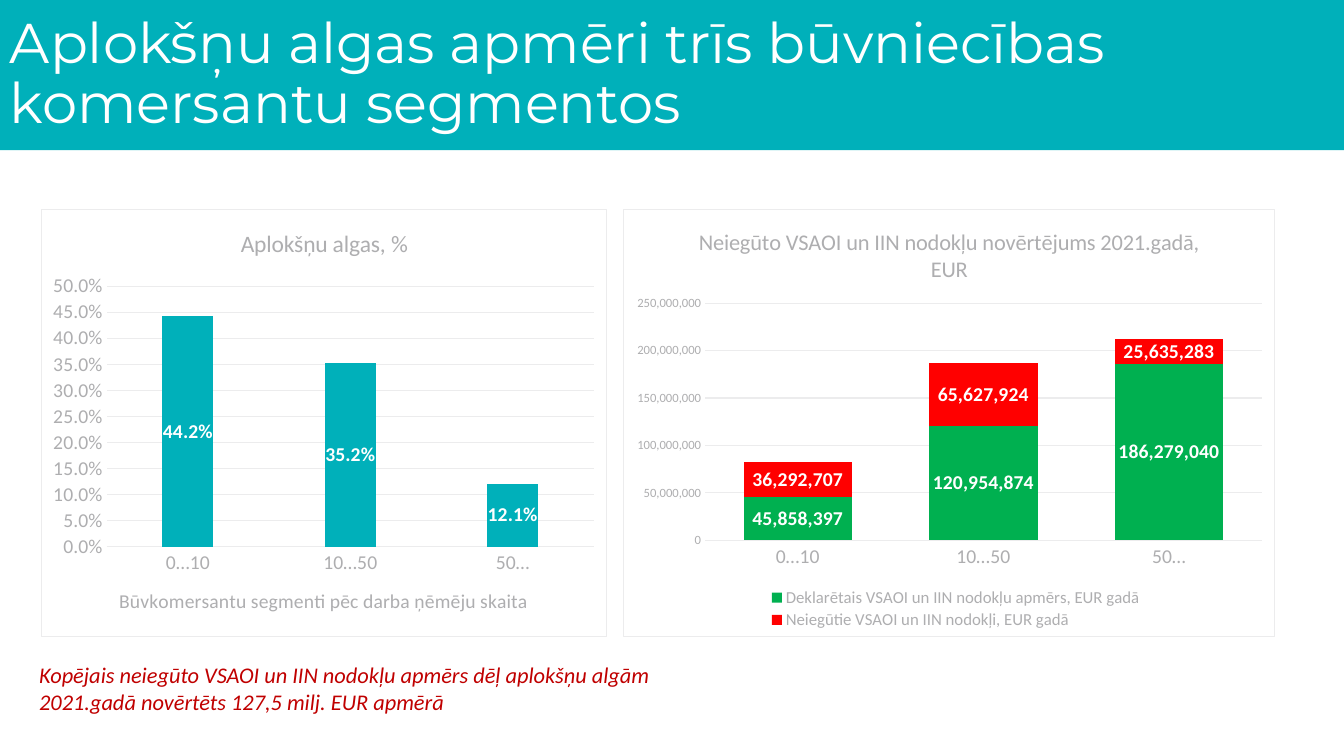
from lxml import etree
from pptx import Presentation
from pptx.chart.data import CategoryChartData
from pptx.dml.color import RGBColor
from pptx.enum.chart import XL_CHART_TYPE, XL_LABEL_POSITION, XL_LEGEND_POSITION, XL_TICK_MARK
from pptx.enum.shapes import MSO_SHAPE
from pptx.enum.text import MSO_ANCHOR
from pptx.oxml import parse_xml
from pptx.oxml.ns import nsdecls, qn
from pptx.util import Inches, Pt

CLUSTERED = XL_CHART_TYPE.COLUMN_CLUSTERED
STACKED = XL_CHART_TYPE.COLUMN_STACKED
CENTER = XL_LABEL_POSITION.CENTER
BOTTOM = XL_LEGEND_POSITION.BOTTOM
NO_TICK = XL_TICK_MARK.NONE
RECTANGLE = MSO_SHAPE.RECTANGLE
TOP, MIDDLE = MSO_ANCHOR.TOP, MSO_ANCHOR.MIDDLE

COLORS = {"teal": "00B0BA", "white": "FFFFFF", "gray": "AEAEB0", "grid": "ECECED",
          "green": "00B050", "red": "FF0000", "dark red": "C00000"}
SEGMENTS = ["0…10", "10…50", "50…"]


def color(name):
    return RGBColor.from_string(COLORS[name])


def format_font(font, size, tint="gray", name="Calibri", bold=False, italic=False):
    font.size, font.name, font.bold, font.italic = Pt(size), name, bold, italic
    font.color.rgb = color(tint)


def write(frame, text, **style):
    para = frame.paragraphs[0]
    span = para.add_run()
    span.text = text
    format_font(span.font, **style)
    return para


def make_layout(x, y, width, height, inner=False):
    target = '<c:layoutTarget val="inner"/>' if inner else ""
    return parse_xml(
        f'<c:layout {nsdecls("c")}><c:manualLayout>{target}'
        '<c:xMode val="edge"/><c:yMode val="edge"/>'
        f'<c:x val="{x}"/><c:y val="{y}"/><c:w val="{width}"/><c:h val="{height}"/>'
        '</c:manualLayout></c:layout>')


class SlideBuilder:
    """Holds the deck and draws styled elements on its current page."""

    def __init__(self, deck):
        self.page = deck.slides.add_slide(deck.slide_layouts[6])

    def band(self, left, top, width, height, fill):
        band = self.page.shapes.add_shape(
            RECTANGLE, Inches(left), Inches(top), Inches(width), Inches(height))
        band.shadow.inherit = False
        band.fill.solid()
        band.fill.fore_color.rgb = color(fill)
        band.line.fill.background()

    def text(self, left, top, width, height, text, anchor=TOP, spacing=1.0, **style):
        box = self.page.shapes.add_textbox(
            Inches(left), Inches(top), Inches(width), Inches(height))
        box.text_frame.word_wrap = True
        box.text_frame.vertical_anchor = anchor
        write(box.text_frame, text, **style).line_spacing = spacing

    def chart(self, left, top, width, height, kind, title, title_size, series, maximum, step,
              number_format, value_size, gap, overlap, plot_layout,
              axis_title=None, legend_layout=None):
        data = CategoryChartData()
        data.categories = SEGMENTS
        for name, values, _ in series:
            data.add_series(name, values)
        chart = self.page.shapes.add_chart(
            kind, Inches(left), Inches(top), Inches(width), Inches(height), data).chart
        format_font(chart.font, 14)
        write(chart.chart_title.text_frame, title, size=title_size)

        plot = chart.plots[0]
        plot.vary_by_categories = False
        plot.gap_width, plot.overlap = gap, overlap
        for bars, (_, _, fill) in zip(plot.series, series):
            bars.format.fill.solid()
            bars.format.fill.fore_color.rgb = color(fill)
            labels = bars.data_labels
            labels.show_value = True
            labels.position = CENTER
            labels.number_format = number_format
            labels.number_format_is_linked = False
            format_font(labels.font, 14, "white", bold=True)

        self.axes(chart, maximum, step, number_format, value_size)
        if axis_title:
            write(chart.category_axis.axis_title.text_frame, axis_title, size=14)
        chart.has_legend = legend_layout is not None
        if legend_layout:
            legend = chart.legend
            legend.position = BOTTOM
            legend.include_in_layout = False
            format_font(legend.font, 12)
            legend._element.find(qn("c:legendPos")).addnext(make_layout(*legend_layout))
        self.frame(chart, plot_layout)

    def axes(self, chart, maximum, step, number_format, value_size):
        for axis, size in ((chart.category_axis, 14), (chart.value_axis, value_size)):
            axis.major_tick_mark = axis.minor_tick_mark = NO_TICK
            format_font(axis.tick_labels.font, size)
        values = chart.value_axis
        values.minimum_scale, values.maximum_scale, values.major_unit = 0, maximum, step
        values.tick_labels.number_format = number_format
        values.tick_labels.number_format_is_linked = False
        values.format.line.fill.background()
        values.has_major_gridlines = True
        for line in (chart.category_axis.format.line, values.major_gridlines.format.line):
            line.color.rgb = color("grid")
            line.width = Pt(0.75)

    def frame(self, chart, plot_layout):
        space = chart._chartSpace
        area = space.find(".//" + qn("c:plotArea"))
        for layout in area.findall(qn("c:layout")):
            area.remove(layout)
        area.insert(0, make_layout(*plot_layout, inner=True))
        style = parse_xml(f'<c:spPr {nsdecls("c", "a")}/>')
        for parent, tint in ((style, "white"),
                             (etree.SubElement(style, qn("a:ln"), w=str(Pt(0.75))), "grid")):
            fill = etree.Element(qn("a:solidFill"))
            etree.SubElement(fill, qn("a:srgbClr"), val=COLORS[tint])
            parent.insert(0, fill)
        space.find(qn("c:chart")).addnext(style)


def main():
    deck = Presentation()
    deck.slide_width, deck.slide_height = Inches(13.33), Inches(7.5)
    slide = SlideBuilder(deck)
    slide.band(0, -0.02, 13.33, 1.51, "teal")
    slide.text(0, 0, 12.82, 1.49, "Aplokšņu algas apmēri trīs būvniecības komersantu segmentos",
               anchor=MIDDLE, spacing=0.9, size=40, tint="white", name="Montserrat")
    slide.chart(0.41, 2.07, 5.61, 4.25, CLUSTERED, "Aplokšņu algas, %", 16.8,
                [("Aplokšņu algas, %", (0.442, 0.352, 0.121), "teal")],
                maximum=0.5, step=0.05, number_format="0.0%", value_size=14,
                gap=219, overlap=-27, plot_layout=(0.115, 0.18, 0.863, 0.61),
                axis_title="Būvkomersantu segmenti pēc darba ņēmēju skaita")
    slide.chart(6.18, 2.07, 6.47, 4.25, STACKED,
                "Neiegūto VSAOI un IIN nodokļu novērtējums 2021.gadā, EUR", 16,
                [("Deklarētais VSAOI un IIN nodokļu apmērs, EUR gadā",
                  (45858397, 120954874, 186279040), "green"),
                 ("Neiegūtie VSAOI un IIN nodokļi, EUR gadā",
                  (36292707, 65627924, 25635283), "red")],
                maximum=250000000, step=50000000, number_format="#,##0", value_size=9,
                gap=71, overlap=100, plot_layout=(0.125, 0.22, 0.855, 0.555),
                legend_layout=(0.21, 0.88, 0.6, 0.11))
    slide.text(0.29, 6.51, 7.17, 0.64,
               "Kopējais neiegūto VSAOI un IIN nodokļu apmērs dēļ aplokšņu algām "
               "2021.gadā novērtēts 127,5 milj. EUR apmērā",
               size=16, tint="dark red", italic=True)
    deck.save("out.pptx")


if __name__ == "__main__":
    main()
